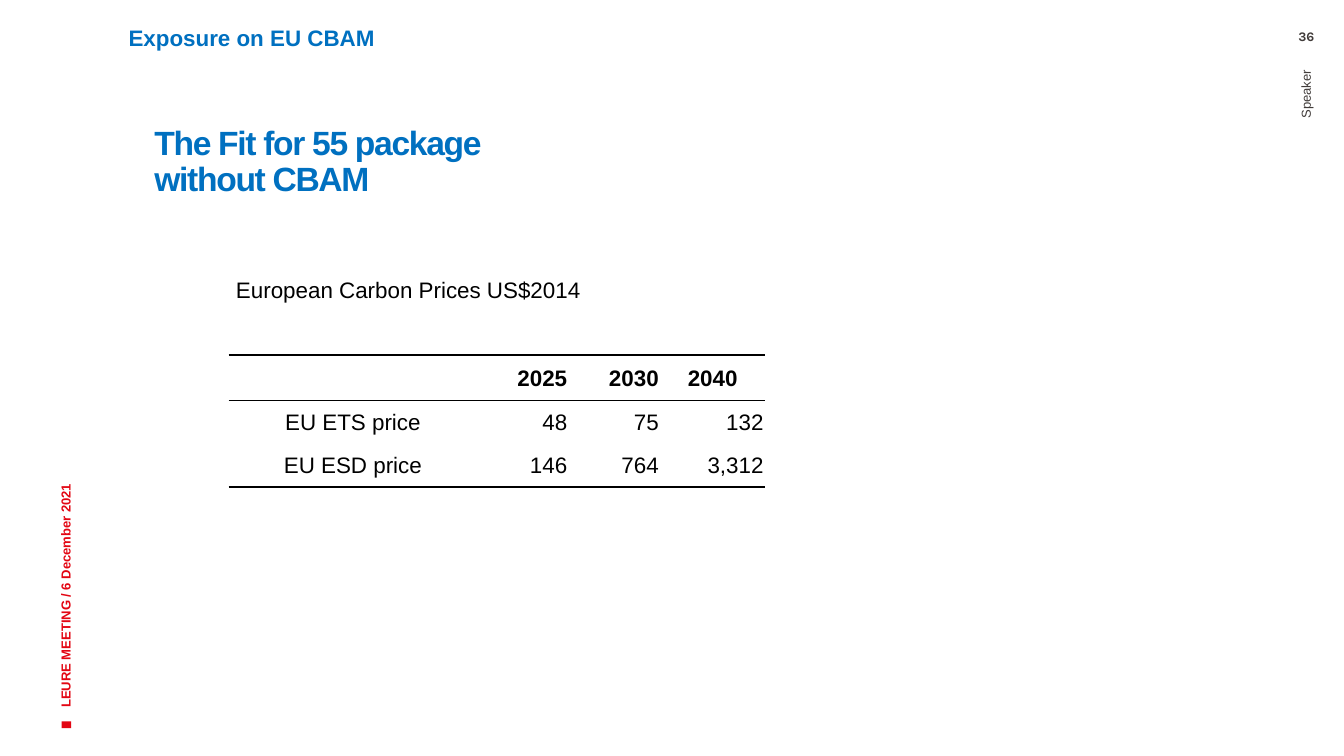
from lxml import etree
from pptx import Presentation
from pptx.dml.color import RGBColor
from pptx.enum.shapes import MSO_SHAPE
from pptx.enum.text import MSO_ANCHOR, PP_ALIGN
from pptx.oxml.ns import qn
from pptx.util import Cm, Pt

LEFT, CENTER, RIGHT = PP_ALIGN.LEFT, PP_ALIGN.CENTER, PP_ALIGN.RIGHT
TOP, MIDDLE = MSO_ANCHOR.TOP, MSO_ANCHOR.MIDDLE
RECTANGLE = MSO_SHAPE.RECTANGLE
BLUE, RED, GREY, BLACK = "0070C0", "E30613", "413C3A", "000000"

# Content: text, box (left, top, width, height in cm), format
TEXTS = [
    ("LEURE MEETING / 6 December 2021", (-3.4, 7.72, 9.27, 2.54),
     dict(size=7, color=RED, bold=True, anchor=MIDDLE, rotation=270)),
    ("Speaker ", (19.76, 5.21, 9.83, 1.42),
     dict(size=7, color=GREY, align=RIGHT, anchor=MIDDLE, rotation=270)),
    ("36", (23.98, 0.53, 1.42, 0.46),
     dict(size=7, color=GREY, bold=True, font="Karla", align=CENTER,
          insets=(0.25, 0, 0.25, 0))),
    ("Exposure on EU CBAM", (2.18, 0.33, 5.28, 0.76),
     dict(size=12, color=BLUE, bold=True, wrap=False)),
    ("The Fit for 55 package without CBAM", (2.41, 2.39, 7.47, 1.83),
     dict(size=18, color=BLUE, bold=True, line_spacing=0.9, tracking=-70,
          insets=(0.51, 0, 0.2, 0.13))),
]
MARKER = (1.19, 13.61, 0.13, 0.18)

PRICES = [
    ["European Carbon Prices US$2014", "", "", ""],
    ["", "", "", ""],
    ["", "2025", "2030", "2040"],
    ["EU ETS price", "48", "75", "132"],
    ["EU ESD price", "146", "764", "3,312"],
]
HEADER_ROW = 2
PRICES_AT = (4.32, 5.08)
COLUMN_WIDTHS = [4.7, 1.73, 1.73, 1.98]
ROW_HEIGHTS = [0.79, 0.84, 0.86, 0.79, 0.84]
RULES = {2: 1.5, 3: 1, 5: 1}  # row boundary: line width in points
CELL_INSETS = (0.03, 0.03, 0.03, 0)


def rgb(color):
    return RGBColor.from_string(color)


def write(paragraph, text, size=12, color=BLACK, bold=False, font="Arial",
          align=LEFT, line_spacing=None, tracking=None):
    paragraph.alignment = align
    if line_spacing:
        paragraph.line_spacing = line_spacing
    run = paragraph.add_run()
    run.text = text
    run.font.size, run.font.bold, run.font.name = Pt(size), bold, font
    run.font.color.rgb = rgb(color)
    if tracking:
        run.font._element.set("spc", str(tracking))


def set_margins(area, insets):
    (area.margin_left, area.margin_top,
     area.margin_right, area.margin_bottom) = map(Cm, insets)


def add_text(text, box, anchor=TOP, rotation=0, wrap=True,
             insets=(0.25, 0.13, 0.25, 0.13), **style):
    textbox = slide.shapes.add_textbox(*map(Cm, box))
    textbox.rotation = rotation
    frame = textbox.text_frame
    frame.word_wrap = wrap
    frame.vertical_anchor = anchor
    set_margins(frame, insets)
    write(frame.paragraphs[0], text, **style)


def set_borders(cell, top, bottom):
    properties = cell._tc.get_or_add_tcPr()
    borders = [("a:lnL", None), ("a:lnR", None), ("a:lnT", top), ("a:lnB", bottom)]
    for position, (tag, width) in enumerate(borders):
        line = etree.Element(qn(tag))
        if width:
            line.set("w", str(Pt(width)))
            fill = etree.SubElement(line, qn("a:solidFill"))
            etree.SubElement(fill, qn("a:srgbClr"), val=BLACK)
        else:
            etree.SubElement(line, qn("a:noFill"))
        properties.insert(position, line)


def cell_align(row, column):
    if row < HEADER_ROW:
        return LEFT
    if column == 0 or (row, column) == (HEADER_ROW, 3):
        return CENTER
    return RIGHT


presentation = Presentation()
presentation.slide_width, presentation.slide_height = Cm(25.4), Cm(14.29)
slide = presentation.slides.add_slide(presentation.slide_layouts[6])

# Red marker beside the meeting line
marker = slide.shapes.add_shape(RECTANGLE, *map(Cm, MARKER))
marker.rotation = 270
marker.shadow.inherit = False
marker.fill.solid()
marker.fill.fore_color.rgb = rgb(RED)
marker.line.fill.background()

# Running texts and title
for text, box, style in TEXTS:
    add_text(text, box, **style)

# Carbon price table
prices = slide.shapes.add_table(
    len(ROW_HEIGHTS), len(COLUMN_WIDTHS), *map(Cm, PRICES_AT),
    Cm(sum(COLUMN_WIDTHS)), Cm(sum(ROW_HEIGHTS))).table
prices.first_row = prices.horz_banding = False
for column, width in zip(prices.columns, COLUMN_WIDTHS):
    column.width = Cm(width)
for row, height in zip(prices.rows, ROW_HEIGHTS):
    row.height = Cm(height)

for r, values in enumerate(PRICES):
    for c, value in enumerate(values):
        cell = prices.cell(r, c)
        cell.fill.background()
        cell.vertical_anchor = MIDDLE
        set_margins(cell, CELL_INSETS)
        set_borders(cell, RULES.get(r), RULES.get(r + 1))
        paragraph = cell.text_frame.paragraphs[0]
        if value:
            write(paragraph, value, bold=r == HEADER_ROW, align=cell_align(r, c))
        else:
            etree.SubElement(paragraph._p, qn("a:endParaRPr"), sz="1200")

# Caption spans three columns, slightly indented
caption = prices.cell(0, 0)
caption.merge(prices.cell(0, 2))
caption.margin_left = Cm(0.14)

presentation.save("out.pptx")
